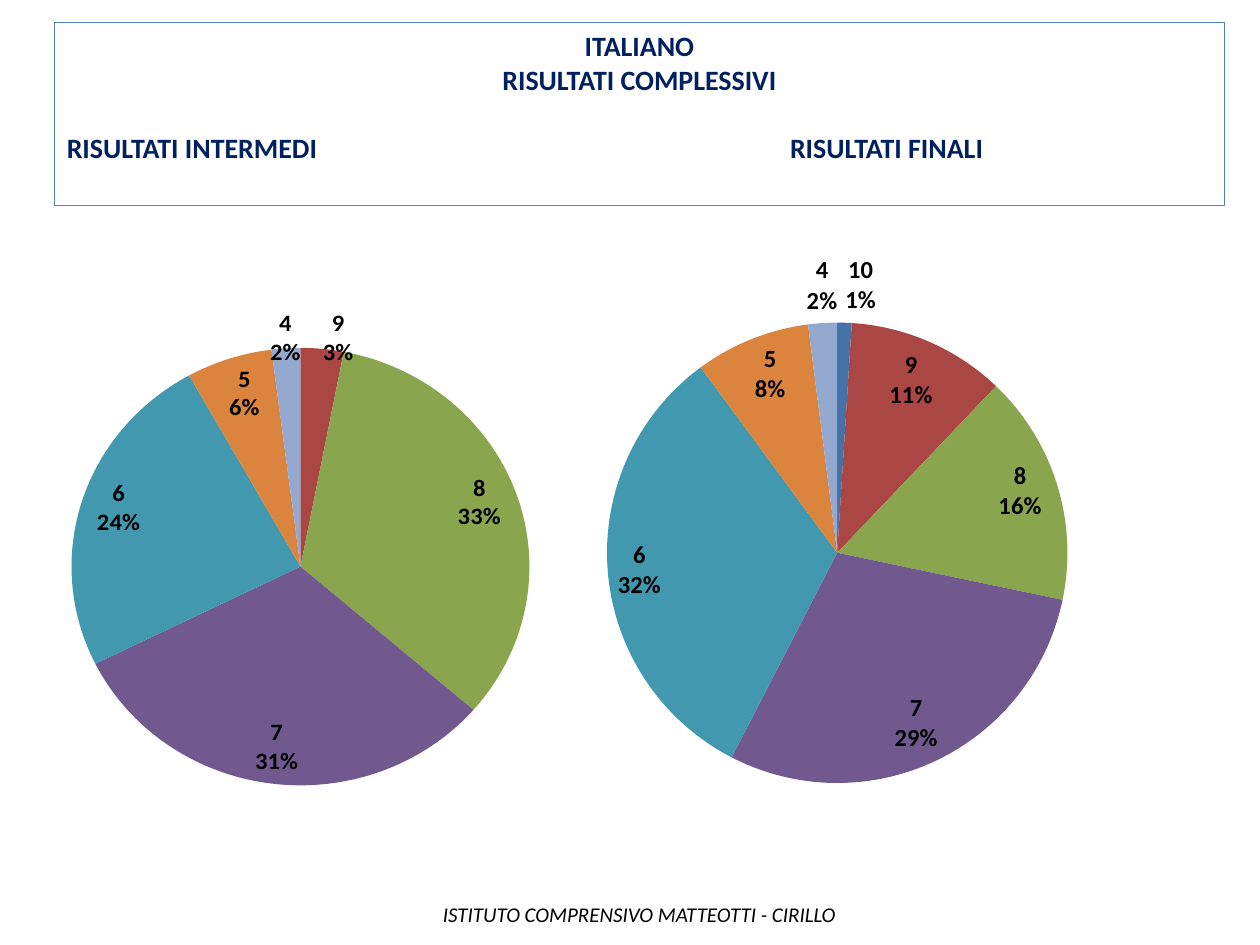
from lxml import etree
from pptx import Presentation
from pptx.chart.data import CategoryChartData
from pptx.dml.color import RGBColor
from pptx.enum.chart import XL_CHART_TYPE, XL_LABEL_POSITION
from pptx.enum.text import MSO_ANCHOR, MSO_AUTO_SIZE, PP_ALIGN
from pptx.oxml import parse_xml
from pptx.oxml.ns import nsdecls, qn
from pptx.util import Inches, Pt

PIE = XL_CHART_TYPE.PIE
BEST_FIT = XL_LABEL_POSITION.BEST_FIT
TOP = MSO_ANCHOR.TOP
FIXED_SIZE = MSO_AUTO_SIZE.NONE
CENTER, LEFT = PP_ALIGN.CENTER, PP_ALIGN.LEFT

TITLE_ONLY = 5
FONT = "Calibri"
MARKS = ["10", "9", "8", "7", "6", "5", "4"]
MARK_COLORS = ["4572A7", "AA4643", "89A54E", "71588F", "4198AF", "DB843D", "93A9CF"]


def rgb(value):
    return RGBColor.from_string(value)


def style_font(font, size, color, bold=False, italic=False):
    font.name = FONT
    font.size = Pt(size)
    font.bold = bold
    font.italic = italic
    font.color.rgb = rgb(color)


def place(box, left, top, width, height):
    box.left, box.top = Inches(left), Inches(top)
    box.width, box.height = Inches(width), Inches(height)


def add_tab_stop(para, position):
    properties = para._p.get_or_add_pPr()
    tabs = etree.SubElement(properties, qn("a:tabLst"))
    etree.SubElement(tabs, qn("a:tab"), pos=str(Inches(position)), algn="l")


def fill_title(box):
    place(box, 0.43, 0.18, 9.29, 1.45)
    box.line.color.rgb = rgb("4F81BD")
    box.line.width = Pt(0.75)
    frame = box.text_frame
    frame.text = "ITALIANO\nRISULTATI COMPLESSIVI\nRISULTATI INTERMEDI\tRISULTATI FINALI"
    frame.word_wrap = True
    frame.auto_size = FIXED_SIZE
    frame.vertical_anchor = TOP
    for para in frame.paragraphs:
        para.alignment = CENTER
        for span in para.runs:
            style_font(span.font, 16, "002060", bold=True)
    headings = frame.paragraphs[-1]
    headings.alignment = LEFT
    headings.space_before = Pt(19.5)
    add_tab_stop(headings, 5.74)


def add_footer(page, text):
    box = page.shapes.add_textbox(Inches(3.35), Inches(7.11), Inches(3.45), Inches(0.3))
    frame = box.text_frame
    frame.text = text
    frame.word_wrap = False
    para = frame.paragraphs[0]
    para.alignment = CENTER
    style_font(para.runs[0].font, 12, "000000", italic=True)


def set_plot_layout(chart, x, y, w, h):
    """Fix the inner plot area, in fractions of the chart frame."""
    plot_area = chart._chartSpace.chart.plotArea
    for old in plot_area.findall(qn("c:layout")):
        plot_area.remove(old)
    sizes = "".join(
        f'<c:{name} val="{value}"/>' for name, value in zip("xywh", (x, y, w, h))
    )
    plot_area.insert(0, parse_xml(
        f'<c:layout {nsdecls("c")}><c:manualLayout><c:layoutTarget val="inner"/>'
        f'<c:xMode val="edge"/><c:yMode val="edge"/>{sizes}'
        '</c:manualLayout></c:layout>'
    ))


def hide_label(labels, index):
    labels._element.insert(0, parse_xml(
        f'<c:dLbl {nsdecls("c")}><c:idx val="{index}"/><c:delete val="1"/></c:dLbl>'
    ))


def add_marks_pie(page, frame, layout, percentages):
    data = CategoryChartData()
    data.categories = MARKS
    data.add_series("Series 1", percentages)
    chart = page.shapes.add_chart(PIE, *map(Inches, frame), data).chart
    chart.has_title = False
    chart.has_legend = False
    style_font(chart.font, 18, "000000")
    set_plot_layout(chart, *layout)

    plot = chart.plots[0]
    plot.vary_by_categories = True
    series = plot.series[0]
    for index, color in enumerate(MARK_COLORS):
        fill = series.points[index].format.fill
        fill.solid()
        fill.fore_color.rgb = rgb(color)

    labels = series.data_labels
    labels.show_value = False
    labels.show_category_name = True
    labels.show_percentage = True
    labels.position = BEST_FIT
    style_font(labels.font, 14, "000000", bold=True)
    for index, percentage in enumerate(percentages):
        if percentage == 0:
            hide_label(labels, index)


def main():
    deck = Presentation()
    deck.slide_width, deck.slide_height = Inches(10), Inches(7.5)
    page = deck.slides.add_slide(deck.slide_layouts[TITLE_ONLY])
    fill_title(page.shapes.title)
    add_footer(page, "ISTITUTO COMPRENSIVO MATTEOTTI - CIRILLO")
    add_marks_pie(page, (0.41, 2.25, 7.9, 4.51), (0.02, 0.07, 0.46, 0.81),
                  [0, 3, 33, 31, 24, 6, 2])
    add_marks_pie(page, (0.32, 1.54, 9.37, 5.53), (0.48, 0.18, 0.39, 0.67),
                  [1, 11, 16, 29, 32, 8, 2])
    deck.save("out.pptx")


if __name__ == "__main__":
    main()
